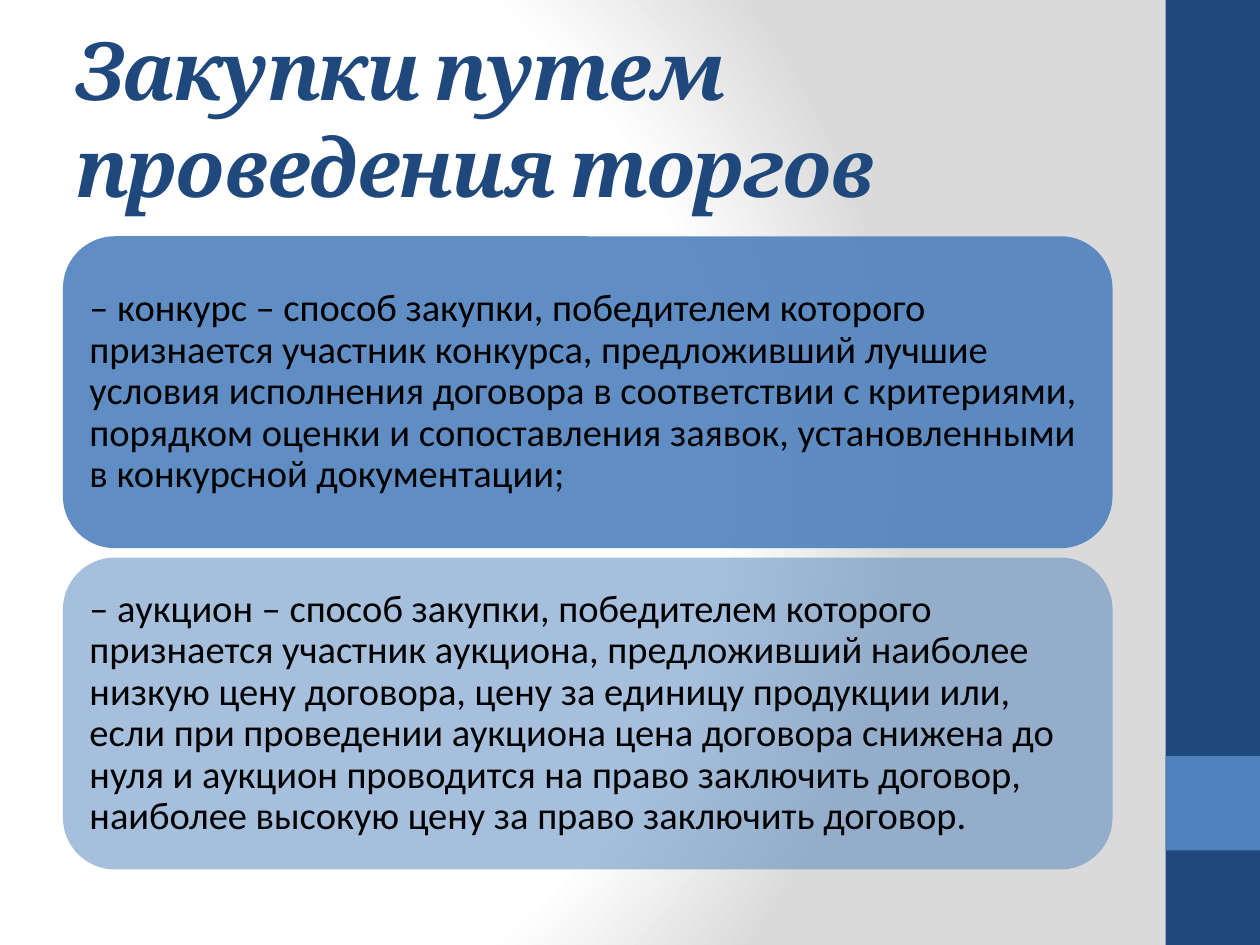
from lxml.etree import SubElement
from pptx import Presentation
from pptx.dml.color import RGBColor
from pptx.enum.shapes import MSO_SHAPE
from pptx.enum.text import MSO_ANCHOR, PP_ALIGN
from pptx.oxml import parse_xml
from pptx.oxml.ns import nsdecls, qn
from pptx.util import Inches, Pt

COLORS = {"navy": "1F497D", "blue": "4F81BD", "black": "000000",
          "white": "FFFFFF", "gray": "DADADA"}
WIDTH, HEIGHT = 10, 7.5
TITLE = "Закупки путем проведения торгов"
CARDS = [
    ("– конкурс – способ закупки, победителем которого признается участник "
     "конкурса, предложивший лучшие условия исполнения договора в соответствии "
     "с критериями, порядком оценки и сопоставления заявок, установленными "
     "в конкурсной документации;", 90),
    ("– аукцион – способ закупки, победителем которого признается участник "
     "аукциона, предложивший наиболее низкую цену договора, цену за единицу "
     "продукции или, если при проведении аукциона цена договора снижена до нуля "
     "и аукцион проводится на право заключить договор, наиболее высокую цену "
     "за право заключить договор.", 50),
]


def color(name):
    """Return a palette colour."""
    return RGBColor.from_string(COLORS[name])


def add_block(page, kind, box, fill, opacity=100):
    """Add a flat filled shape without outline or shadow."""
    shape = page.shapes.add_shape(kind, *map(Inches, box))
    shape.shadow.inherit = False
    shape.fill.solid()
    shape.fill.fore_color.rgb = color(fill)
    shape.line.fill.background()
    if opacity < 100:
        tint = shape.fill._xPr.find(".//" + qn("a:srgbClr"))
        SubElement(tint, qn("a:alpha"), val=str(opacity * 1000))
    return shape


def write(frame, text, font, size, ink):
    """Write one left-aligned, vertically centred paragraph."""
    frame.word_wrap = True
    frame.vertical_anchor = MSO_ANCHOR.MIDDLE
    para = frame.paragraphs[0]
    para.text = text
    para.alignment = PP_ALIGN.LEFT
    para.font.name, para.font.size = font, Pt(size)
    para.font.color.rgb = color(ink)
    return para


def paint_background(page):
    """Fill the page with a radial gradient centred left of the middle."""
    stops = "".join(
        f'<a:gs pos="{share * 1000}"><a:srgbClr val="{COLORS[name]}"/></a:gs>'
        for share, name in ((0, "white"), (75, "white"), (100, "gray")))
    page._element.cSld.insert(0, parse_xml(
        f'<p:bg {nsdecls("p", "a")}><p:bgPr><a:gradFill rotWithShape="1">'
        f'<a:gsLst>{stops}</a:gsLst><a:path path="circle">'
        '<a:fillToRect l="20000" t="50000" r="100000" b="50000"/></a:path>'
        '</a:gradFill><a:effectLst/></p:bgPr></p:bg>'))


def add_sidebar(page, box):
    """Add the side band with a lighter square near its foot."""
    left, top, width, height = box
    add_block(page, MSO_SHAPE.RECTANGLE, box, "navy")
    square = (left, top + height * 0.8, width, width)
    add_block(page, MSO_SHAPE.RECTANGLE, square, "blue")


def add_title(page, box):
    """Add the slide heading."""
    frame = page.shapes.add_textbox(*map(Inches, box)).text_frame
    para = write(frame, TITLE, "Cambria", 46, "navy")
    para.font.bold = para.font.italic = True
    para.runs[0].font._element.set("spc", "-100")


def add_cards(page, box, gap):
    """Stack equal rounded cards in the box, separated by the gap."""
    left, top, width, height = box
    card_height = (height - gap * (len(CARDS) - 1)) / len(CARDS)
    for row, (text, opacity) in enumerate(CARDS):
        place = (left, top + row * (card_height + gap), width, card_height)
        card = add_block(page, MSO_SHAPE.ROUNDED_RECTANGLE, place, "blue", opacity)
        frame = card.text_frame
        frame.margin_left = frame.margin_right = Inches(0.09)
        frame.margin_top = frame.margin_bottom = Inches(0.09)
        write(frame, text, "Calibri", 22, "black").line_spacing = 0.9


def main():
    """Build and save the deck."""
    deck = Presentation()
    deck.slide_width, deck.slide_height = Inches(WIDTH), Inches(HEIGHT)
    page = deck.slides.add_slide(deck.slide_layouts[6])
    left, width, band = WIDTH * 0.05, WIDTH * 0.833, WIDTH * 0.075
    paint_background(page)
    add_sidebar(page, (WIDTH - band, 0, band, HEIGHT))
    add_title(page, (left, HEIGHT * 0.04, width, HEIGHT / 6))
    add_cards(page, (left, HEIGHT * 0.25, width, HEIGHT * 0.67), HEIGHT * 0.01)
    deck.save("out.pptx")


if __name__ == "__main__":
    main()
